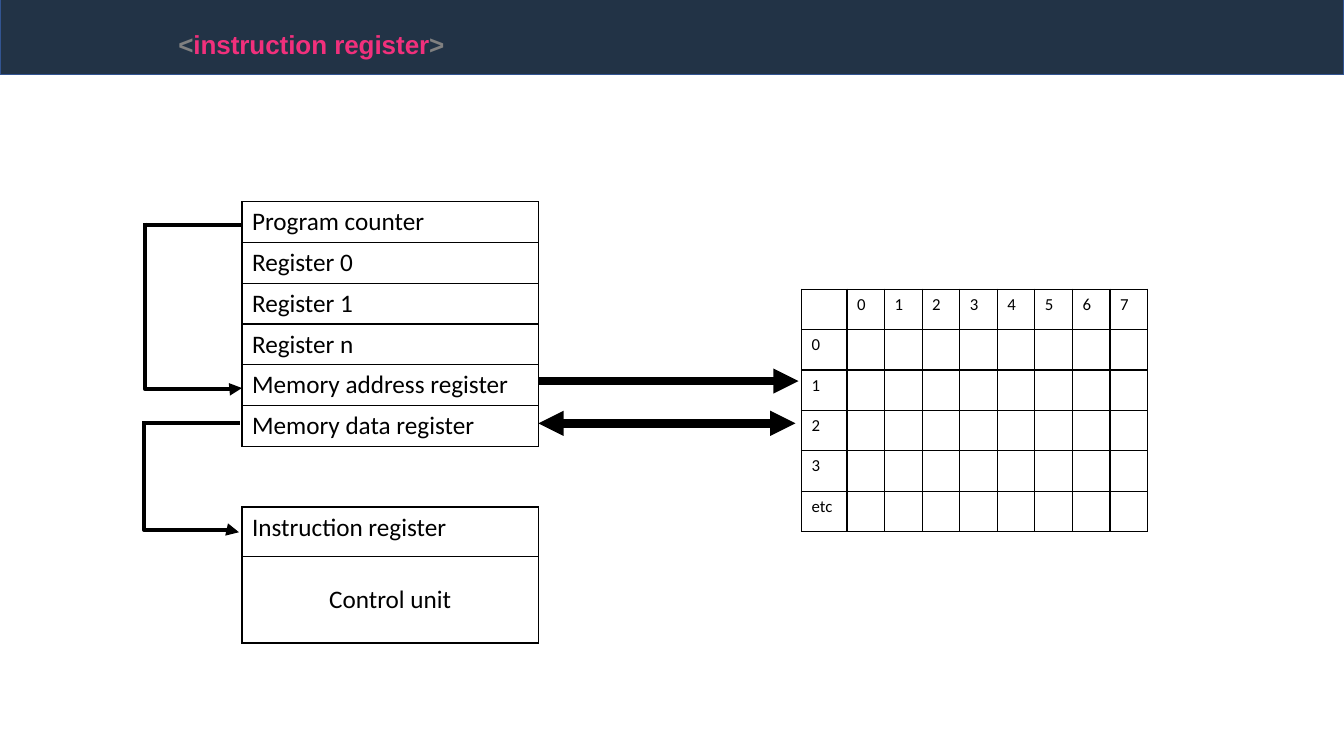
from lxml.etree import SubElement
from pptx import Presentation
from pptx.dml.color import RGBColor
from pptx.enum.shapes import MSO_CONNECTOR, MSO_SHAPE
from pptx.enum.text import MSO_ANCHOR, MSO_AUTO_SIZE, PP_ALIGN
from pptx.oxml.ns import qn
from pptx.util import Inches, Pt

COLORS = {"band": "223346", "band_line": "325491", "bracket": "808080",
          "title": "F1307C", "ink": "000000"}
TITLE = [("<", "bracket"), ("instruction register", "title"), (">", "bracket")]
REGISTERS = [["Program counter"], ["Register 0"], ["Register 1"], ["Register n"],
             ["Memory address register"], ["Memory data register"]]
CONTROL = [["Instruction register"], ["Control unit"]]
COLUMNS = 8
MEMORY = [["", *map(str, range(COLUMNS))]]
MEMORY += [[label] + [""] * COLUMNS for label in ("0", "1", "2", "3", "etc")]

STRAIGHT_LINES = [
    ((5.34, 3.78), (7.92, 3.78), 6, ["tailEnd"]),
    ((5.34, 4.2), (7.89, 4.2), 6, ["headEnd", "tailEnd"]),
    ((2.4, 2.23), (1.43, 2.23), 3, []),
    ((2.38, 4.2), (1.41, 4.2), 3, []),
]
ELBOWS = [((1.44, 2.21), (2.4, 3.85), 100700), ((1.43, 4.2), (2.37, 5.28), 97900)]


def color(name):
    return RGBColor.from_string(COLORS[name])


def add_text(paragraph, text, size=18, font="Calibri", ink="ink", bold=False, baseline=None):
    run = paragraph.add_run()
    run.text = text
    run.font.size = Pt(size)
    run.font.name = font
    run.font.bold = bold
    run.font.color.rgb = color(ink)
    if baseline:
        run.font._element.set("baseline", str(baseline))


def add_borders(cell):
    properties = cell._tc.get_or_add_tcPr()
    for side in ("a:lnL", "a:lnR", "a:lnT", "a:lnB"):
        border = SubElement(properties, qn(side), w=str(Pt(1)))
        fill = SubElement(border, qn("a:solidFill"))
        SubElement(fill, qn("a:srgbClr"), val=COLORS["ink"])


def add_grid(slide, left, top, widths, heights, rows, size):
    table = slide.shapes.add_table(
        len(heights), len(widths), Inches(left), Inches(top),
        Inches(sum(widths)), Inches(sum(heights))).table
    table.first_row = False
    table.horz_banding = False
    for column, width in zip(table.columns, widths):
        column.width = Inches(width)
    for row, height, texts in zip(table.rows, heights, rows):
        row.height = Inches(height)
        for cell, text in zip(row.cells, texts):
            add_borders(cell)
            cell.fill.background()
            add_text(cell.text_frame.paragraphs[0], text, size=size)
    return table


def add_line(slide, kind, start, end, width, arrows):
    connector = slide.shapes.add_connector(kind, *map(Inches, (*start, *end)))
    connector.line.color.rgb = color("ink")
    connector.line.width = Pt(width)
    for arrow in arrows:
        SubElement(connector.line._get_or_add_ln(), qn(f"a:{arrow}"), type="triangle")
    SubElement(connector._element.spPr, qn("a:effectLst"))
    return connector


def add_elbow(slide, start, end, bend):
    width, height = end[0] - start[0], end[1] - start[1]
    left = (start[0] + end[0] - height) / 2
    top = (start[1] + end[1] - width) / 2
    connector = add_line(slide, MSO_CONNECTOR.ELBOW, (left, top),
                         (left + height, top + width), 3, ["tailEnd"])
    properties = connector._element.spPr
    transform = properties.find(qn("a:xfrm"))
    transform.set("rot", str(270 * 60000))
    transform.set("flipH", "1")
    adjustments = properties.find(qn("a:prstGeom")).get_or_add_avLst()
    SubElement(adjustments, qn("a:gd"), name="adj1", fmla=f"val {bend}")


def add_header(slide):
    band = slide.shapes.add_shape(MSO_SHAPE.RECTANGLE, 0, Inches(-0.04),
                                  Inches(13.33), Inches(0.78))
    band.shadow.inherit = False
    band.fill.solid()
    band.fill.fore_color.rgb = color("band")
    band.line.color.rgb = color("band_line")
    band.line.width = Pt(1)
    title = slide.shapes.add_textbox(*map(Inches, (1.67, 0.18, 2.86, 0.64))).text_frame
    title.word_wrap = False
    title.auto_size = MSO_AUTO_SIZE.SHAPE_TO_FIT_TEXT
    for text, ink in TITLE:
        add_text(title.paragraphs[0], text, size=32, font="Arial", ink=ink,
                 bold=True, baseline=30000)


def main():
    presentation = Presentation()
    presentation.slide_width = Inches(13.33)
    presentation.slide_height = Inches(7.5)
    slide = presentation.slides.add_slide(presentation.slide_layouts[6])
    add_header(slide)
    add_grid(slide, 2.4, 2, [2.94], [0.405] * len(REGISTERS), REGISTERS, 18)
    add_grid(slide, 7.95, 2.87, [0.45] + [0.373] * COLUMNS, [0.4] * len(MEMORY), MEMORY, 12)
    control = add_grid(slide, 2.4, 5.03, [2.94], [0.49, 0.86], CONTROL, 18)
    unit = control.cell(1, 0)
    unit.vertical_anchor = MSO_ANCHOR.MIDDLE
    unit.text_frame.paragraphs[0].alignment = PP_ALIGN.CENTER
    for line in STRAIGHT_LINES:
        add_line(slide, MSO_CONNECTOR.STRAIGHT, *line)
    for elbow in ELBOWS:
        add_elbow(slide, *elbow)
    presentation.save("out.pptx")


if __name__ == "__main__":
    main()
